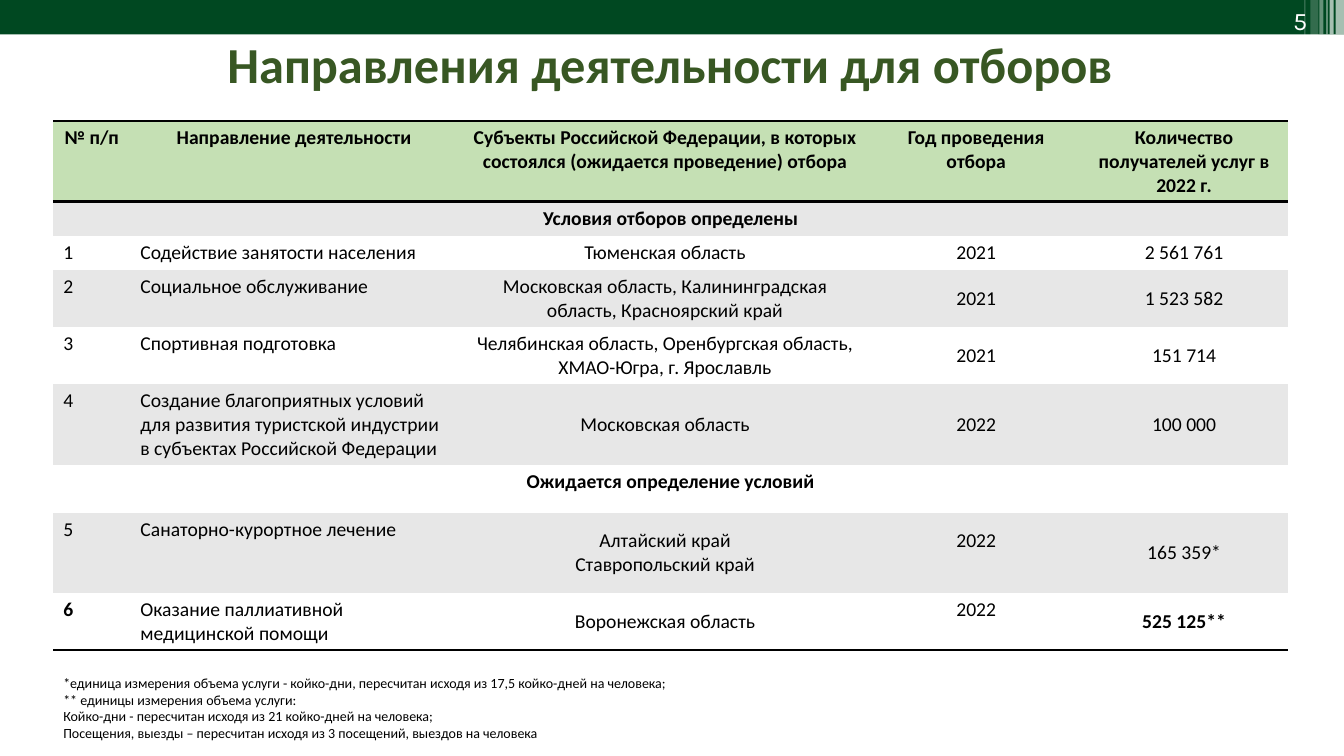
from dataclasses import dataclass

from lxml.etree import SubElement
from pptx import Presentation
from pptx.dml.color import RGBColor
from pptx.enum.shapes import MSO_SHAPE
from pptx.enum.text import MSO_ANCHOR, PP_ALIGN
from pptx.oxml.ns import qn
from pptx.slide import Slide
from pptx.table import _Cell
from pptx.text.text import TextFrame
from pptx.util import Pt


@dataclass(frozen=True)
class Theme:
    banner: str = "004821"
    title: str = "385723"
    header: str = "C5E0B4"
    band: str = "E7E7E7"
    white: str = "FFFFFF"
    black: str = "000000"
    font: str = "Calibri"
    number_font: str = "Karla"
    title_size: float = 36
    number_size: float = 18
    table_size: float = 14
    note_size: float = 10


@dataclass(frozen=True)
class Box:
    left: float
    top: float
    width: float
    height: float


@dataclass(frozen=True)
class Bar:
    box: Box
    color: str
    opacity: int = 100


@dataclass(frozen=True)
class Style:
    size: float
    color: str
    font: str = "Calibri"
    bold: bool = False
    align: PP_ALIGN = PP_ALIGN.LEFT
    spacing: float = 1.0


@dataclass(frozen=True)
class Row:
    height: float
    texts: tuple[str, ...]
    bold_columns: tuple[int, ...] = ()
    year_lift: float = 0  # extra bottom margin that raises the year


THEME = Theme()
SLIDE_WIDTH, SLIDE_HEIGHT = 960, 540
ALL_COLUMNS = (0, 1, 2, 3, 4)
YEAR_COLUMN = 3

BARS = [
    Bar(Box(0, 0, SLIDE_WIDTH, 24.6), THEME.banner),
    Bar(Box(954, 0, 6, 24.6), THEME.white, 65),
    Bar(Box(949.7, 0, 2.9, 24.6), THEME.white, 65),
    Bar(Box(947.5, 0, 0.8, 24.6), THEME.white, 60),
    Bar(Box(942.5, 0, 2.9, 24.6), THEME.white, 40),
    Bar(Box(936, 0, 5.8, 25.9), THEME.white, 20),
    Bar(Box(931.7, 0, 0.8, 25.9), THEME.white, 30),
]

TABLE_BOX = Box(38.1, 86.4, 882, 376.5)
COLUMN_WIDTHS = (55, 234, 296, 148.5, 148.5)
ROWS = [
    Row(57.2, ("№ п/п", "Направление деятельности",
               "Субъекты Российской Федерации, в которых состоялся (ожидается проведение) отбора",
               "Год проведения отбора", "Количество получателей услуг в 2022 г."), ALL_COLUMNS),
    Row(24.3, ("Условия отборов определены",), (0,)),
    Row(24.3, ("1", "Содействие занятости населения", "Тюменская область", "2021", "2 561 761")),
    Row(40.7, ("2", "Социальное обслуживание",
               "Московская область, Калининградская область, Красноярский край", "2021", "1 523 582")),
    Row(40.7, ("3", "Спортивная подготовка",
               "Челябинская область, Оренбургская область, ХМАО-Югра, г. Ярославль", "2021", "151 714")),
    Row(57.2, ("4", "Создание благоприятных условий для развития туристской индустрии "
               "в субъектах Российской Федерации", "Московская область", "2022", "100 000")),
    Row(34.6, ("Ожидается определение условий",), (0,)),
    Row(56.9, ("5", "Санаторно-курортное лечение", "Алтайский край\nСтавропольский край",
               "2022", "165 359*"), year_lift=17),
    Row(40.6, ("6", "Оказание паллиативной медицинской помощи", "Воронежская область",
               "2022", "525 125**"), (0, 4), year_lift=16),
]

NOTES = "\n".join((
    "*единица измерения объема услуги - койко-дни, пересчитан исходя из 17,5 койко-дней на человека;",
    "** единицы измерения объема услуги:",
    "Койко-дни - пересчитан исходя из 21 койко-дней на человека;",
    "Посещения, выезды – пересчитан исходя из 3 посещений, выездов на человека",
))


def write(text_frame: TextFrame, text: str, style: Style) -> None:
    text_frame.text = text
    text_frame.word_wrap = True
    for paragraph in text_frame.paragraphs:
        paragraph.alignment = style.align
        paragraph.line_spacing = style.spacing
        for run in paragraph.runs:
            run.font.name = style.font
            run.font.size = Pt(style.size)
            run.font.bold = style.bold
            run.font.color.rgb = RGBColor.from_string(style.color)


def add_text(slide: Slide, box: Box, text: str, style: Style) -> None:
    shape = slide.shapes.add_textbox(Pt(box.left), Pt(box.top), Pt(box.width), Pt(box.height))
    write(shape.text_frame, text, style)


def add_bar(slide: Slide, bar: Bar) -> None:
    box = bar.box
    shape = slide.shapes.add_shape(
        MSO_SHAPE.RECTANGLE, Pt(box.left), Pt(box.top), Pt(box.width), Pt(box.height))
    shape.shadow.inherit = False
    shape.line.fill.background()
    shape.fill.solid()
    shape.fill.fore_color.rgb = RGBColor.from_string(bar.color)
    if bar.opacity < 100:
        color = next(shape.element.spPr.iter(qn("a:srgbClr")))
        SubElement(color, qn("a:alpha"), val=str(bar.opacity * 1000))


def add_border(cell: _Cell, side: str) -> None:
    properties = cell._tc.get_or_add_tcPr()
    line = SubElement(properties, qn(f"a:ln{side}"), w=str(Pt(2)))
    fill = SubElement(line, qn("a:solidFill"))
    SubElement(fill, qn("a:srgbClr"), val=THEME.black)


def add_directions_table(slide: Slide) -> None:
    box = TABLE_BOX
    table = slide.shapes.add_table(len(ROWS), len(COLUMN_WIDTHS), Pt(box.left), Pt(box.top),
                                   Pt(box.width), Pt(box.height)).table
    # Plain style without a grid
    table._tbl.tblPr.find(qn("a:tableStyleId")).text = "{2D5ABB26-0587-4C30-8999-92F81FD0307C}"
    for column, width in zip(table.columns, COLUMN_WIDTHS):
        column.width = Pt(width)

    last = len(ROWS) - 1
    for row_index, row in enumerate(ROWS):
        table.rows[row_index].height = Pt(row.height)
        is_header, is_section = row_index == 0, len(row.texts) == 1
        sides = {0: "TB", last: "B"}.get(row_index, "")
        fill = THEME.header if is_header else THEME.band if row_index % 2 else THEME.white
        if is_section:
            table.cell(row_index, 0).merge(table.cell(row_index, len(COLUMN_WIDTHS) - 1))
        for column_index, text in enumerate(row.texts):
            cell = table.cell(row_index, column_index)
            for side in sides:
                add_border(cell, side)
            cell.fill.solid()
            cell.fill.fore_color.rgb = RGBColor.from_string(fill)
            centred = is_header or is_section or column_index >= 2
            write(cell.text_frame, text, Style(
                THEME.table_size, THEME.black, THEME.font, column_index in row.bold_columns,
                PP_ALIGN.CENTER if centred else PP_ALIGN.LEFT))
            if not is_header and column_index >= 2:
                cell.vertical_anchor = MSO_ANCHOR.MIDDLE
            if column_index == YEAR_COLUMN and row.year_lift:
                cell.margin_bottom = Pt(3.6 + row.year_lift)


def main() -> None:
    presentation = Presentation()
    presentation.slide_width, presentation.slide_height = Pt(SLIDE_WIDTH), Pt(SLIDE_HEIGHT)
    slide = presentation.slides.add_slide(presentation.slide_layouts[6])

    # Banner with the slide number
    for bar in BARS:
        add_bar(slide, bar)
    add_text(slide, Box(854.6, 0, 86.4, 26.6), "5",
             Style(THEME.number_size, THEME.white, THEME.number_font, align=PP_ALIGN.RIGHT))

    # Title, table and footnotes
    add_text(slide, Box(13.7, 31.7, 930.2, 39.6), "Направления деятельности для отборов",
             Style(THEME.title_size, THEME.title, THEME.font, True, PP_ALIGN.CENTER, 0.7))
    add_directions_table(slide)
    add_text(slide, Box(38.1, 478.1, 882, 79.9), NOTES,
             Style(THEME.note_size, THEME.black, THEME.font))

    presentation.save("out.pptx")


if __name__ == "__main__":
    main()
